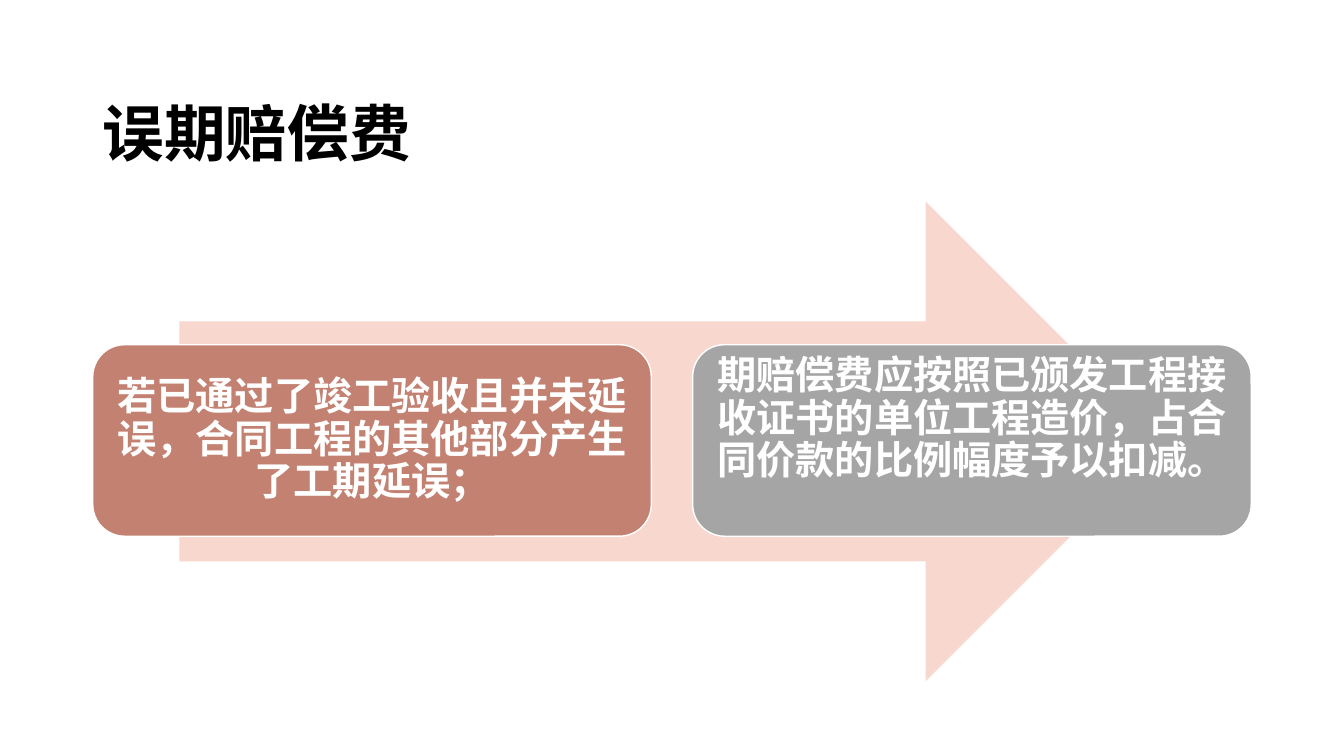
from pptx import Presentation
from pptx import util as u
from pptx.dml.color import RGBColor
from pptx.enum import shapes, text

COLORS = {
    "ink": "000000",
    "white": "FFFFFF",
    "arrow": "F8D7CE",
    "clay": "C38172",
    "gray": "A5A5A5",
}
FONT = "Times New Roman"
KIND = shapes.MSO_SHAPE
ALIGN = text.PP_ALIGN


class Deck:
    def __init__(self):
        self.prs = Presentation()
        self.prs.slide_width = u.Inches(13.33)
        self.prs.slide_height = u.Inches(7.5)
        self.slide = self.prs.slides.add_slide(self.prs.slide_layouts[6])

    def color(self, name):
        return RGBColor.from_string(COLORS[name])

    def label(self, frame, words, size, color, align, space, pads):
        """Fill a frame; pads are left, top, right and bottom in inches."""
        left, top, right, bottom = map(u.Inches, pads)
        frame.margin_left, frame.margin_right = left, right
        frame.margin_top, frame.margin_bottom = top, bottom
        frame.word_wrap = True
        frame.vertical_anchor = text.MSO_ANCHOR.MIDDLE
        para = frame.paragraphs[0]
        para.alignment = align
        para.line_spacing = space
        run = para.add_run()
        run.text = words
        style = {"name": FONT, "size": u.Pt(size), "bold": True}
        for key, value in style.items():
            setattr(run.font, key, value)
        run.font.color.rgb = self.color(color)

    def title(self, box, words):
        frame = self.slide.shapes.add_textbox(*map(u.Inches, box)).text_frame
        self.label(frame, words, 44, "ink", ALIGN.JUSTIFY, 1.5,
                   (0.1, 0.05, 0.1, 0.05))

    def shape(self, kind, box, fill, line=None):
        item = self.slide.shapes.add_shape(kind, *map(u.Inches, box))
        item.shadow.inherit = False
        item.fill.solid()
        item.fill.fore_color.rgb = self.color(fill)
        if line:
            item.line.color.rgb = self.color(line)
            item.line.width = u.Pt(1)
        else:
            item.line.fill.background()
        return item

    def card(self, box, fill, words, pads):
        item = self.shape(KIND.ROUNDED_RECTANGLE, box, fill, "white")
        self.label(item.text_frame, words, 28, "white", ALIGN.CENTER, 0.9, pads)


def main():
    deck = Deck()
    deck.title((0.92, 0.4, 11.5, 1.45), "误期赔偿费")
    deck.shape(KIND.RIGHT_ARROW, (1.78, 2, 9.78, 4.76), "arrow")
    cards = [
        ("clay", "若已通过了竣工验收且并未延误，合同工程的其他部分产生了工期延误；",
         (0.12, 0.12, 0.12, 0.12)),
        ("gray", "期赔偿费应按照已颁发工程接收证书的单位工程造价，占合同价款的比例幅度予以扣减。",
         (0.12, 0, 0.12, 0.42)),
    ]
    left, step = 0.92, 5.95
    for i, (fill, words, pads) in enumerate(cards):
        deck.card((left + i * step, 3.42, 5.54, 1.9), fill, words, pads)
    deck.prs.save("out.pptx")


if __name__ == "__main__":
    main()
